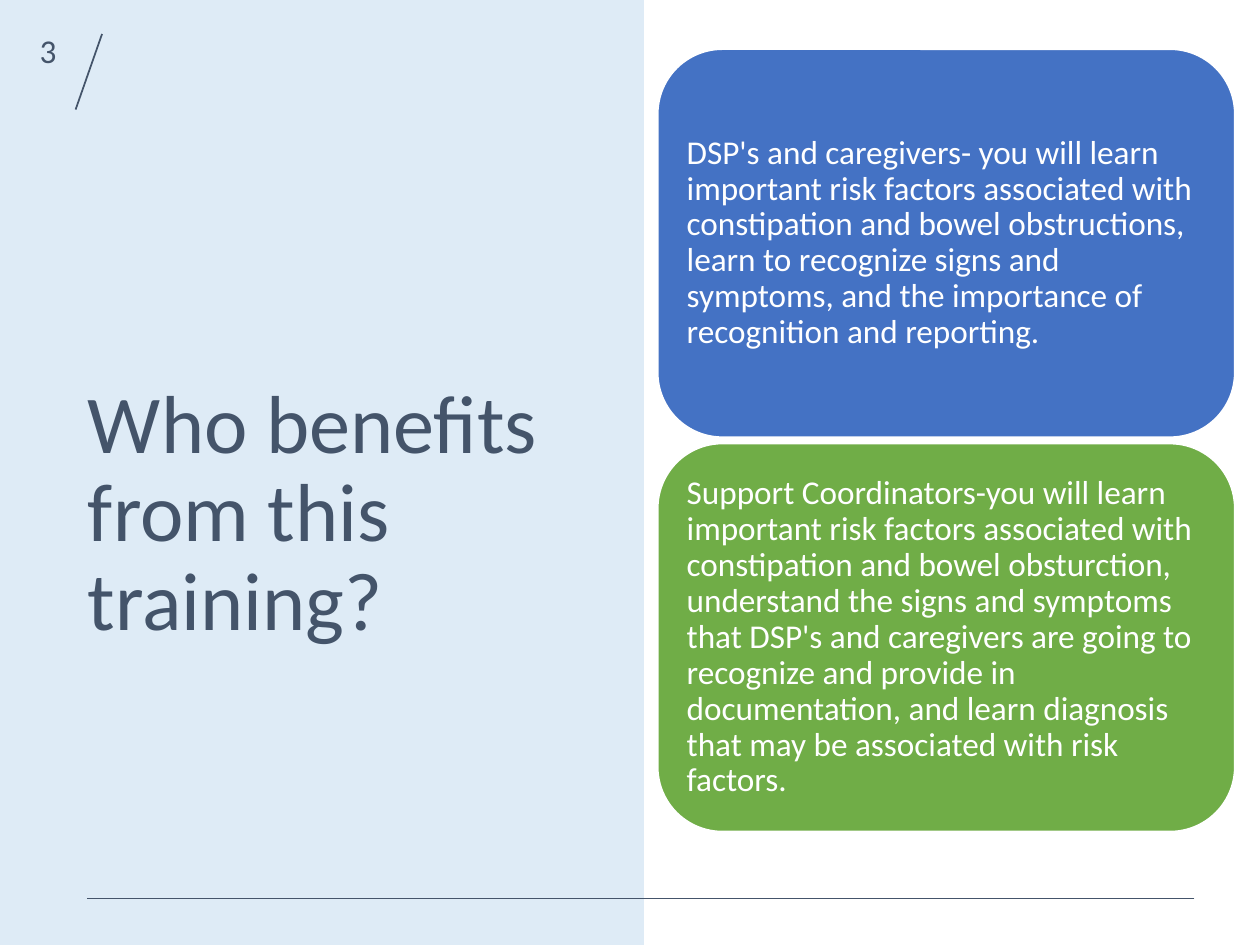
from dataclasses import dataclass

from lxml.etree import SubElement
from pptx import Presentation
from pptx.dml.color import RGBColor
from pptx.enum.shapes import MSO_CONNECTOR, MSO_SHAPE
from pptx.enum.text import MSO_ANCHOR, PP_ALIGN
from pptx.oxml.ns import qn
from pptx.util import Inches, Pt


@dataclass(frozen=True)
class Theme:
    font: str = "Calibri"
    ink: str = "44546A"
    paper: str = "FFFFFF"
    panel: str = "5B9BD5"
    panel_opacity: float = 0.2
    cards: tuple = ("4472C4", "70AD47")
    title_size: float = 47
    body_size: float = 19
    line_width: float = 1


@dataclass(frozen=True)
class Box:
    left: float
    top: float
    width: float
    height: float

    def inches(self):
        return [Inches(v) for v in (self.left, self.top, self.width, self.height)]

    def point(self, across, down):
        """Point at the given shares of the box's width and height."""
        return (Inches(self.left + across * self.width),
                Inches(self.top + down * self.height))


THEME = Theme()
PAGE = Box(0, 0, 10, 7.5)
TITLE = "Who benefits from this training?"
AUDIENCES = (
    "DSP's and caregivers- you will learn important risk factors associated with "
    "constipation and bowel obstructions, learn to recognize signs and symptoms, "
    "and the importance of recognition and reporting.",
    "Support Coordinators-you will learn important risk factors associated with "
    "constipation and bowel obsturction, understand the signs and symptoms that "
    "DSP's and caregivers are going to recognize and provide in documentation, "
    "and learn diagnosis that may be associated with risk factors.",
)


def color(value):
    return RGBColor.from_string(value)


def add_plain_shape(slide, kind, box, fill=None, line=None):
    shape = slide.shapes.add_shape(kind, *box.inches())
    shape.shadow.inherit = False
    if fill:
        shape.fill.solid()
        shape.fill.fore_color.rgb = color(fill)
    else:
        shape.fill.background()
    if line:
        shape.line.color.rgb = color(line)
        shape.line.width = Pt(THEME.line_width)
    else:
        shape.line.fill.background()
    return shape


def write(shape, text, size, ink, align=PP_ALIGN.LEFT, spacing=1.0):
    frame = shape.text_frame
    frame.word_wrap = True
    frame.vertical_anchor = MSO_ANCHOR.MIDDLE
    frame.text = text
    paragraph = frame.paragraphs[0]
    paragraph.alignment = align
    paragraph.line_spacing = spacing
    font = paragraph.runs[0].font
    font.name, font.size = THEME.font, Pt(size)
    font.color.rgb = color(ink)
    return frame


def add_line(slide, start, end):
    line = slide.shapes.add_connector(MSO_CONNECTOR.STRAIGHT, *start, *end)
    line.line.color.rgb = color(THEME.ink)
    line.line.width = Pt(THEME.line_width)
    SubElement(line._element.spPr, qn("a:effectLst"))


def add_title_panel(slide, box):
    panel = add_plain_shape(slide, MSO_SHAPE.RECTANGLE, box, THEME.panel)
    tint = panel._element.spPr.find(qn("a:solidFill"))[0]
    SubElement(tint, qn("a:alpha"), val=str(int(THEME.panel_opacity * 100000)))
    title_box = Box(box.left + 0.6, box.top + 1.28, 4, 5.62)
    title = slide.shapes.add_textbox(*title_box.inches())
    write(title, TITLE, THEME.title_size, THEME.ink, spacing=0.9)


def add_page_number(slide, box):
    """Number in the box's corner, with a slash along its right side."""
    number_box = Box(box.left, box.top, 0.64, 0.8)
    number = add_plain_shape(slide, MSO_SHAPE.OVAL, number_box)
    write(number, "3", THEME.body_size, THEME.ink, PP_ALIGN.RIGHT)
    slash = Box(box.left + 0.6, box.top + 0.27, 0.21, 0.6)
    add_line(slide, slash.point(1, 0), slash.point(0, 1))


def add_audience_cards(slide, box, gap=0.05):
    """Equal cards stacked down the box, one for each audience."""
    height = (box.height - gap * (len(AUDIENCES) - 1)) / len(AUDIENCES)
    for row, (text, fill) in enumerate(zip(AUDIENCES, THEME.cards)):
        card_box = Box(box.left, box.top + row * (height + gap), box.width, height)
        card = add_plain_shape(slide, MSO_SHAPE.ROUNDED_RECTANGLE, card_box,
                               fill, THEME.paper)
        frame = write(card, text, THEME.body_size, THEME.paper, spacing=0.9)
        frame.margin_left = frame.margin_right = Inches(0.08)
        frame.margin_top = frame.margin_bottom = Inches(0.08)


def main():
    presentation = Presentation()
    presentation.slide_width = Inches(PAGE.width)
    presentation.slide_height = Inches(PAGE.height)
    slide = presentation.slides.add_slide(presentation.slide_layouts[6])
    slide.background.fill.solid()
    slide.background.fill.fore_color.rgb = color(THEME.paper)

    add_title_panel(slide, Box(0, 0, 5.11, PAGE.height))
    add_page_number(slide, Box(0, 0, 0.81, 0.87))
    footer = Box(0.69, 7.13, 8.79, 0)
    add_line(slide, footer.point(1, 0), footer.point(0, 0))
    add_audience_cards(slide, Box(5.22, 0.39, 4.58, 6.21))
    presentation.save("out.pptx")


if __name__ == "__main__":
    main()
